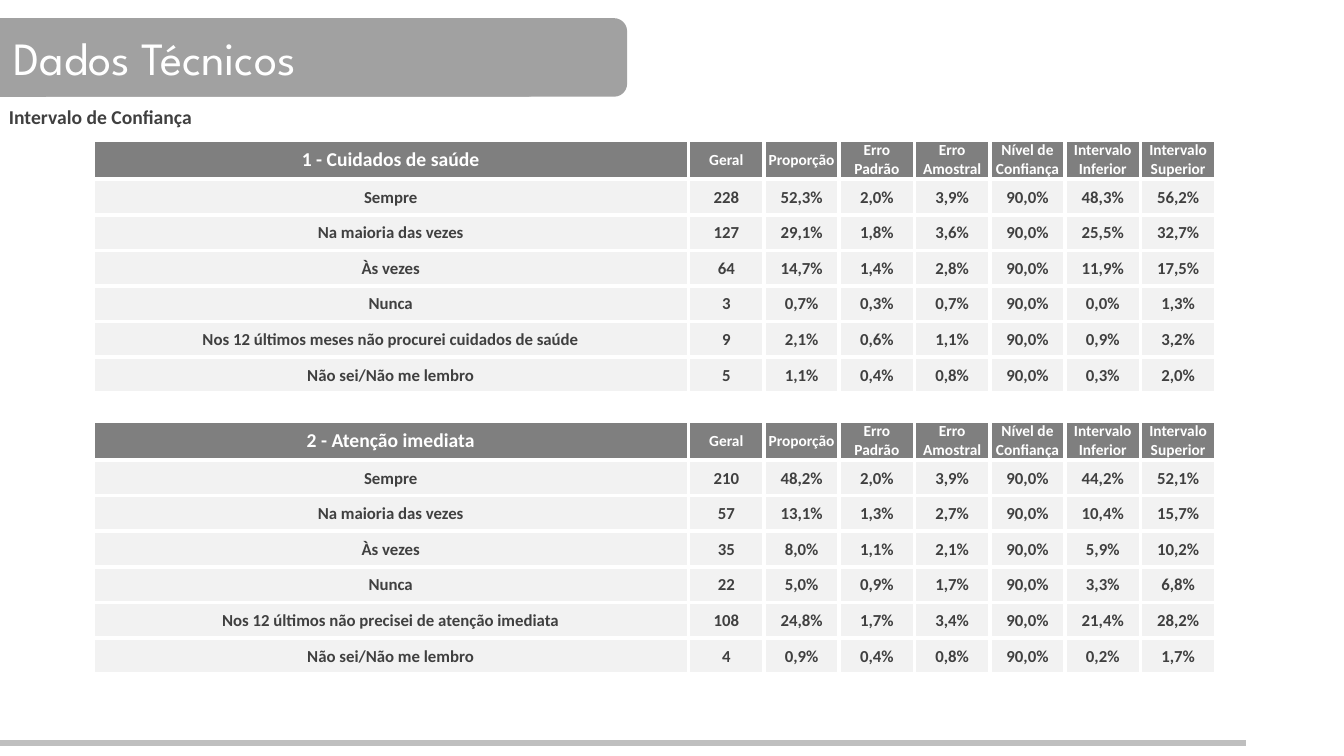
from dataclasses import dataclass

import lxml.etree
import pptx
import pptx.dml.color
import pptx.enum.shapes
import pptx.enum.text
import pptx.oxml.ns
import pptx.util

Inches = pptx.util.Inches
Pt = pptx.util.Pt
qn = pptx.oxml.ns.qn

WHITE, DARK = "FFFFFF", "404040"
BANNER, RULE, HEADING, BODY = "A1A1A1", "BFBFBF", "7F7F7F", "F2F2F2"
TABLE_WIDTH, LABEL_WIDTH = 11.14, 5.91
HEADING_HEIGHT, ANSWERS_HEIGHT, GAP_HEIGHT = 0.36, 2.12, 0.28
MEASURES = ("Geral", "Proporção", "Erro Padrão", "Erro Amostral",
            "Nível de Confiança", "Intervalo Inferior", "Intervalo Superior")


@dataclass(frozen=True)
class Answer:
    label: str
    figures: str


@dataclass(frozen=True)
class Question:
    title: str
    answers: tuple[Answer, ...]


@dataclass(frozen=True)
class Banner:
    left: float
    width: float
    title: str = ""


QUESTIONS = (
    Question("1 - Cuidados de saúde", (
        Answer("Sempre", "228 52,3% 2,0% 3,9% 90,0% 48,3% 56,2%"),
        Answer("Na maioria das vezes", "127 29,1% 1,8% 3,6% 90,0% 25,5% 32,7%"),
        Answer("Às vezes", "64 14,7% 1,4% 2,8% 90,0% 11,9% 17,5%"),
        Answer("Nunca", "3 0,7% 0,3% 0,7% 90,0% 0,0% 1,3%"),
        Answer("Nos 12 últimos meses não procurei cuidados de saúde",
               "9 2,1% 0,6% 1,1% 90,0% 0,9% 3,2%"),
        Answer("Não sei/Não me lembro", "5 1,1% 0,4% 0,8% 90,0% 0,3% 2,0%"),
    )),
    Question("2 - Atenção imediata", (
        Answer("Sempre", "210 48,2% 2,0% 3,9% 90,0% 44,2% 52,1%"),
        Answer("Na maioria das vezes", "57 13,1% 1,3% 2,7% 90,0% 10,4% 15,7%"),
        Answer("Às vezes", "35 8,0% 1,1% 2,1% 90,0% 5,9% 10,2%"),
        Answer("Nunca", "22 5,0% 0,9% 1,7% 90,0% 3,3% 6,8%"),
        Answer("Nos 12 últimos não precisei de atenção imediata",
               "108 24,8% 1,7% 3,4% 90,0% 21,4% 28,2%"),
        Answer("Não sei/Não me lembro", "4 0,9% 0,4% 0,8% 90,0% 0,2% 1,7%"),
    )),
)
BANNERS = (Banner(-0.27, 6.49), Banner(0, 5.36, "Dados Técnicos"))


def color(value: str) -> pptx.dml.color.RGBColor:
    return pptx.dml.color.RGBColor.from_string(value)


def write(frame, text: str, *, size: float, fill: str, font: str = "Calibri",
          bold: bool = True, centered: bool = False) -> None:
    paragraph = frame.paragraphs[0]
    align = pptx.enum.text.PP_ALIGN
    paragraph.alignment = align.CENTER if centered else align.LEFT
    run = paragraph.add_run()
    run.text = text
    run.font.name = font
    run.font.size = Pt(size)
    run.font.bold = bold
    run.font.color.rgb = color(fill)


def add_banner(slide, banner: Banner) -> None:
    shape = slide.shapes.add_shape(
        pptx.enum.shapes.MSO_SHAPE.ROUNDED_RECTANGLE,
        Inches(banner.left), Inches(0.18), Inches(banner.width), Inches(0.78))
    shape.shadow.inherit = False
    shape.fill.solid()
    shape.fill.fore_color.rgb = color(BANNER)
    shape.line.fill.background()
    if banner.title:
        shape.text_frame.vertical_anchor = pptx.enum.text.MSO_ANCHOR.MIDDLE
        write(shape.text_frame, banner.title, size=33, fill=WHITE,
              font="League Spartan", bold=False)


def add_footer_rule(slide) -> None:
    rule = slide.shapes.add_connector(
        pptx.enum.shapes.MSO_CONNECTOR.STRAIGHT,
        Inches(0), Inches(7.37), Inches(12.36), Inches(7.37))
    rule.line.color.rgb = color(RULE)
    rule.line.width = Pt(4.5)
    lxml.etree.SubElement(rule._element.spPr, qn("a:effectLst"))


def format_cell(cell) -> None:
    cell.vertical_anchor = pptx.enum.text.MSO_ANCHOR.MIDDLE
    cell.margin_left = cell.margin_right = cell.margin_top = Inches(0.01)
    cell.margin_bottom = 0
    properties = cell._tc.get_or_add_tcPr()
    for side in ("a:lnL", "a:lnR", "a:lnT", "a:lnB"):
        border = lxml.etree.SubElement(properties, qn(side), w=str(Pt(3)))
        solid = lxml.etree.SubElement(border, qn("a:solidFill"))
        lxml.etree.SubElement(solid, qn("a:srgbClr"), val=WHITE)


def fill_row(row, texts: list[str], *, background: str, ink: str,
             label_size: float, figure_size: float) -> None:
    for column, (cell, text) in enumerate(zip(row.cells, texts)):
        format_cell(cell)
        cell.fill.solid()
        cell.fill.fore_color.rgb = color(background)
        write(cell.text_frame, text, fill=ink, centered=True,
              size=figure_size if column else label_size)


def clear_row(row) -> None:
    for cell in row.cells:
        format_cell(cell)
        cell.fill.background()
        paragraph = cell.text_frame.paragraphs[0]._p
        lxml.etree.SubElement(paragraph, qn("a:endParaRPr"), sz="1200")


def add_confidence_table(slide) -> None:
    row_count = sum(len(question.answers) + 1 for question in QUESTIONS)
    row_count += len(QUESTIONS) - 1
    table = slide.shapes.add_table(
        row_count, len(MEASURES) + 1, Inches(0.92), Inches(1.39),
        Inches(TABLE_WIDTH), Inches(5.29)).table
    table.first_row = table.horz_banding = False
    measure_width = (TABLE_WIDTH - LABEL_WIDTH) / len(MEASURES)
    for index, column in enumerate(table.columns):
        column.width = Inches(measure_width if index else LABEL_WIDTH)

    rows = iter(table.rows)
    for index, question in enumerate(QUESTIONS):
        if index:
            gap = next(rows)
            gap.height = Inches(GAP_HEIGHT)
            clear_row(gap)
        heading = next(rows)
        heading.height = Inches(HEADING_HEIGHT)
        fill_row(heading, [question.title, *MEASURES], background=HEADING,
                 ink=WHITE, label_size=14, figure_size=11)
        for answer in question.answers:
            row = next(rows)
            row.height = Inches(ANSWERS_HEIGHT / len(question.answers))
            fill_row(row, [answer.label, *answer.figures.split()], background=BODY,
                     ink=DARK, label_size=12, figure_size=12)


def add_subtitle(slide) -> None:
    subtitle = slide.shapes.add_textbox(
        Inches(-0.01), Inches(0.99), Inches(2.03), Inches(0.34))
    subtitle.text_frame.word_wrap = False
    subtitle.text_frame.auto_size = pptx.enum.text.MSO_AUTO_SIZE.SHAPE_TO_FIT_TEXT
    write(subtitle.text_frame, "Intervalo de Confiança", size=14, fill=DARK)


def main() -> None:
    deck = pptx.Presentation()
    deck.slide_width = Inches(13.33)
    deck.slide_height = Inches(7.5)
    slide = deck.slides.add_slide(deck.slide_layouts[6])
    background_banner, title_banner = BANNERS
    add_banner(slide, background_banner)
    add_footer_rule(slide)
    add_banner(slide, title_banner)
    add_confidence_table(slide)
    add_subtitle(slide)
    deck.save("out.pptx")


if __name__ == "__main__":
    main()
